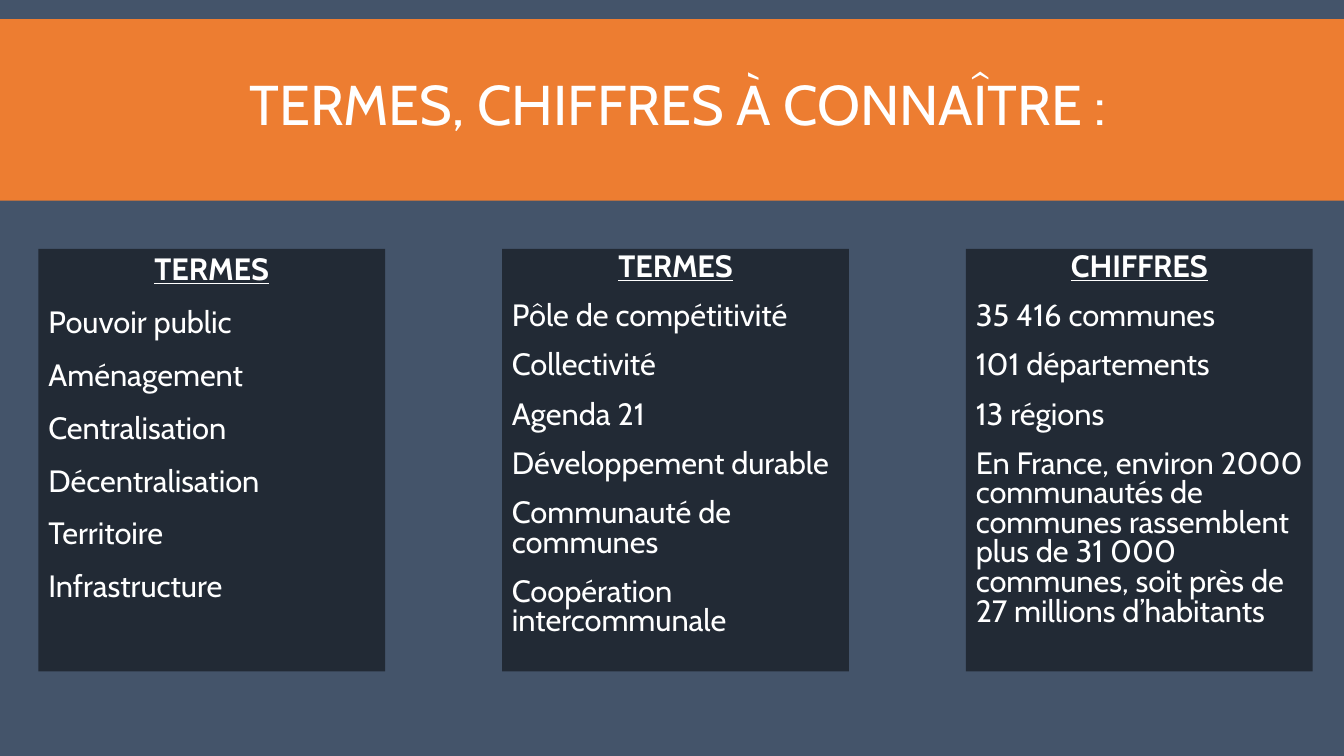
from dataclasses import dataclass

from lxml import etree
from pptx import Presentation
from pptx.dml.color import RGBColor
from pptx.enum import shapes, text
from pptx.oxml.ns import qn
from pptx.util import Inches, Pt

FONT = "Cabin"
WHITE, ORANGE, SLATE, NAVY = "FFFFFF", "ED7D31", "44546A", "222A35"
PANEL_LEFT, PANEL_STEP = 0.38, 4.6
PANEL_TOP, PANEL_WIDTH, PANEL_HEIGHT = 2.47, 3.44, 4.19


@dataclass
class Panel:
    heading: str
    items: list[str]
    line_spacing: float


PANELS = [
    Panel("TERMES", ["Pouvoir public", "Aménagement", "Centralisation",
                     "Décentralisation", "Territoire", "Infrastructure"], 0.9),
    Panel("TERMES", ["Pôle de compétitivité", "Collectivité", "Agenda 21",
                     "Développement durable", "Communauté de communes",
                     "Coopération intercommunale"], 0.8),
    Panel("CHIFFRES", ["35 416 communes", "101 départements", "13 régions",
                       "En France, environ 2000 communautés de communes "
                       "rassemblent plus de 31 000 communes, soit près de "
                       "27 millions d’habitants"], 0.8),
]


def paint(fill, color: str) -> None:
    fill.solid()
    fill.fore_color.rgb = RGBColor.from_string(color)


def place(sp, left: float, top: float, width: float, height: float) -> None:
    sp.left, sp.top = Inches(left), Inches(top)
    sp.width, sp.height = Inches(width), Inches(height)


def add_rect(s, color: str):
    sp = s.shapes.add_shape(shapes.MSO_SHAPE.RECTANGLE, 0, 0, 0, 0)
    sp.shadow.inherit = False
    sp.line.fill.background()
    paint(sp.fill, color)
    return sp


def format_font(font, size: float, bold: bool = False) -> None:
    font.name = FONT
    font.size = Pt(size)
    font.bold = font.underline = bold
    font.color.rgb = RGBColor.from_string(WHITE)


def setup_frame(tf, anchor) -> None:
    tf.word_wrap = True
    tf.auto_size = text.MSO_AUTO_SIZE.NONE
    tf.vertical_anchor = anchor


def fill_panel(sp, panel: Panel) -> None:
    paint(sp.fill, NAVY)
    tf = sp.text_frame
    setup_frame(tf, text.MSO_ANCHOR.TOP)
    tf.text = "\n".join([panel.heading, *panel.items])
    for i, p in enumerate(tf.paragraphs):
        is_heading = i == 0
        pPr = p._p.get_or_add_pPr()
        pPr.set("marL", "0")
        pPr.set("indent", "0")
        etree.SubElement(pPr, qn("a:buNone"))
        p.alignment = text.PP_ALIGN.CENTER if is_heading else text.PP_ALIGN.LEFT
        p.line_spacing = panel.line_spacing
        p.space_before = Pt(0 if is_heading else 12)
        p.space_after = Pt(2)
        for r in p.runs:
            format_font(r.font, 22, is_heading)


def add_header(s) -> None:
    banner = add_rect(s, ORANGE)
    place(banner, 0, 0.19, 13.33, 1.8)
    s.shapes._spTree.insert(2, banner._element)
    title = s.shapes.title
    place(title, 0.12, 0.35, 13.33, 1.45)
    tf = title.text_frame
    setup_frame(tf, text.MSO_ANCHOR.MIDDLE)
    tf.text = "TERMES, CHIFFRES À CONNAÎTRE : "
    p = tf.paragraphs[0]
    p.alignment = text.PP_ALIGN.CENTER
    p.line_spacing = 0.85
    format_font(p.runs[0].font, 40)


def main() -> None:
    prs = Presentation()
    prs.slide_width, prs.slide_height = Inches(13.33), Inches(7.5)
    s = prs.slides.add_slide(prs.slide_layouts[1])
    paint(s.background.fill, SLATE)
    add_header(s)
    for i, panel in enumerate(PANELS):
        sp = s.placeholders[1] if i == 0 else add_rect(s, NAVY)
        place(sp, PANEL_LEFT + i * PANEL_STEP, PANEL_TOP, PANEL_WIDTH, PANEL_HEIGHT)
        fill_panel(sp, panel)
    prs.save("out.pptx")


if __name__ == "__main__":
    main()
